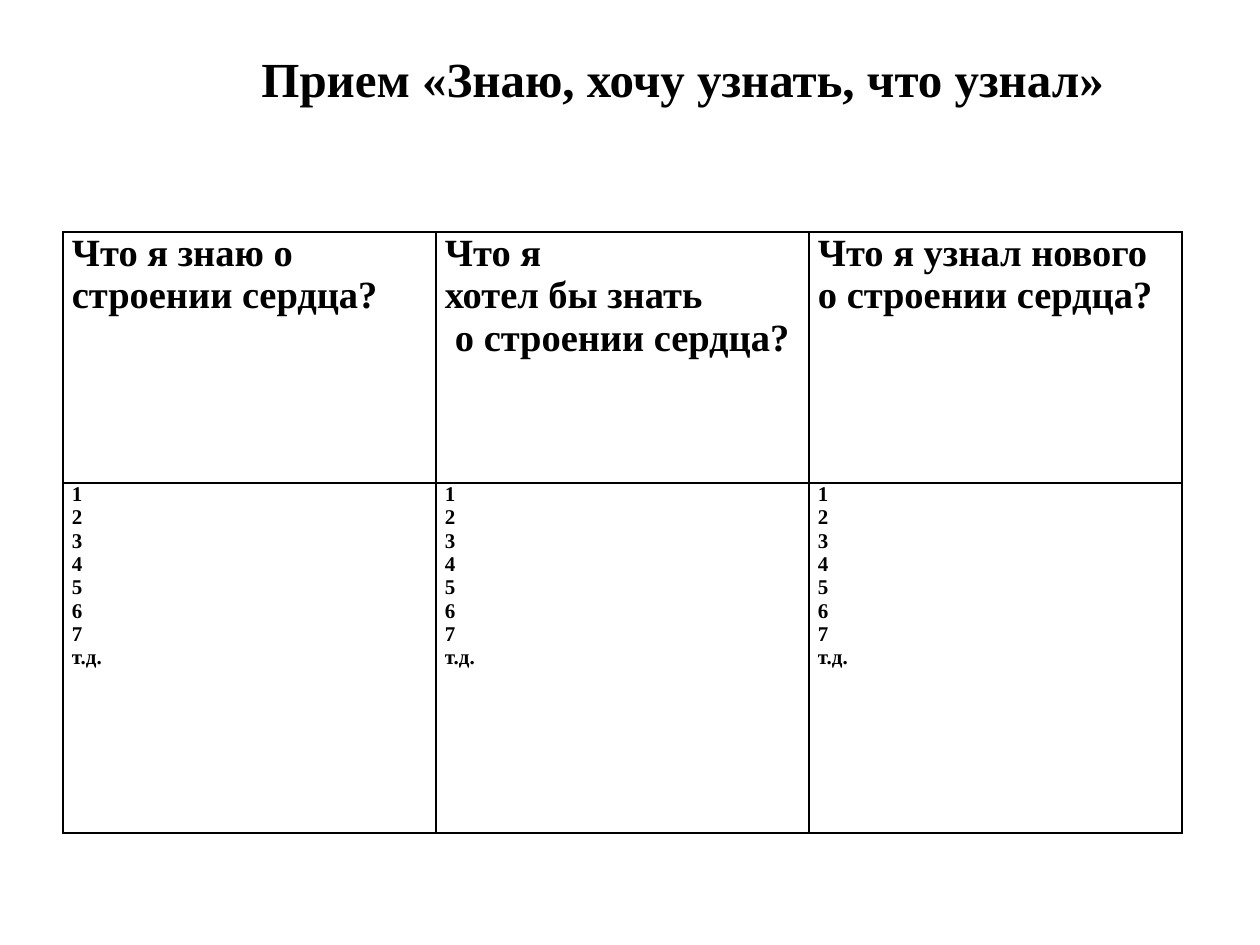
"""Build the slide with the three-column "know, want to know, learned" table."""
from dataclasses import dataclass

from lxml.etree import SubElement
from pptx import Presentation
from pptx.dml.color import RGBColor
from pptx.enum.text import MSO_ANCHOR as Anchor, PP_ALIGN as Align
from pptx.oxml.ns import qn
from pptx.util import Pt

EMU_PER_INCH = 914400
PX_PER_INCH = 126
FONT = "Times New Roman"
COLORS = {"ink": "000000", "paper": "FFFFFF"}
TITLE = "Прием «Знаю, хочу узнать, что узнал»"
TITLE_SIZE, HEADING_SIZE, ITEM_SIZE = 28, 22, 12
COLUMN_WIDTH = 373
ROW_HEIGHTS = (251, 350)
CELL_INSET = 9
ITEMS = (*"1234567", "т.д.")


@dataclass(frozen=True)
class Line:
    text: str
    indent: int = 0


HEADINGS = (
    (Line("Что я знаю о"), Line("строении сердца?")),
    (Line("Что я"), Line("хотел бы знать"), Line("о строении сердца?", 10)),
    (Line("Что я узнал нового о строении сердца?"),),
)


def px(length: int) -> int:
    return round(length * EMU_PER_INCH / PX_PER_INCH)


def add_span(para, text: str, size: int) -> None:
    span = para.add_run()
    span.text = text
    font = span.font
    font.name, font.size, font.bold = FONT, Pt(size), True
    font.color.rgb = RGBColor.from_string(COLORS["ink"])


def add_borders(cell) -> None:
    props = cell._tc.get_or_add_tcPr()
    for position, side in enumerate(("a:lnL", "a:lnR", "a:lnT", "a:lnB")):
        border = SubElement(props, qn(side), w=str(Pt(1)))
        props.insert(position, border)
        fill = SubElement(border, qn("a:solidFill"))
        SubElement(fill, qn("a:srgbClr"), val=COLORS["ink"])


def fill_cell(cell, lines: tuple[Line, ...], size: int) -> None:
    cell.margin_left = cell.margin_right = px(CELL_INSET)
    cell.margin_top = cell.margin_bottom = 0
    cell.vertical_anchor = Anchor.TOP
    cell.fill.solid()
    cell.fill.fore_color.rgb = RGBColor.from_string(COLORS["paper"])
    add_borders(cell)
    frame = cell.text_frame
    for index, line in enumerate(lines):
        para = frame.add_paragraph() if index else frame.paragraphs[0]
        if line.indent:
            para._p.get_or_add_pPr().set("marL", str(px(line.indent)))
        add_span(para, line.text, size)


def add_title(page) -> None:
    box = page.shapes.title
    box.left, box.top, box.width, box.height = map(px, (64, 38, 1178, 79))
    frame = box.text_frame
    frame.word_wrap = True
    frame.vertical_anchor = Anchor.MIDDLE
    frame.margin_left = px(72)
    para = frame.paragraphs[0]
    para.alignment = Align.CENTER
    add_span(para, TITLE, TITLE_SIZE)


def add_chart_of_knowledge(page) -> None:
    count = len(HEADINGS)
    frame = page.shapes.add_table(
        len(ROW_HEIGHTS), count, px(63), px(232),
        px(COLUMN_WIDTH * count), px(sum(ROW_HEIGHTS)),
    )
    table = frame.table
    table.first_row = table.horz_banding = False
    for row, height in zip(table.rows, ROW_HEIGHTS):
        row.height = px(height)
    items = tuple(Line(item) for item in ITEMS)
    for index, heading in enumerate(HEADINGS):
        table.columns[index].width = px(COLUMN_WIDTH)
        fill_cell(table.cell(0, index), heading, HEADING_SIZE)
        fill_cell(table.cell(1, index), items, ITEM_SIZE)


def main() -> None:
    deck = Presentation()
    deck.slide_width, deck.slide_height = px(1260), px(945)
    page = deck.slides.add_slide(deck.slide_layouts[5])
    page.background.fill.solid()
    page.background.fill.fore_color.rgb = RGBColor.from_string(COLORS["paper"])
    add_title(page)
    add_chart_of_knowledge(page)
    deck.save("out.pptx")


if __name__ == "__main__":
    main()
